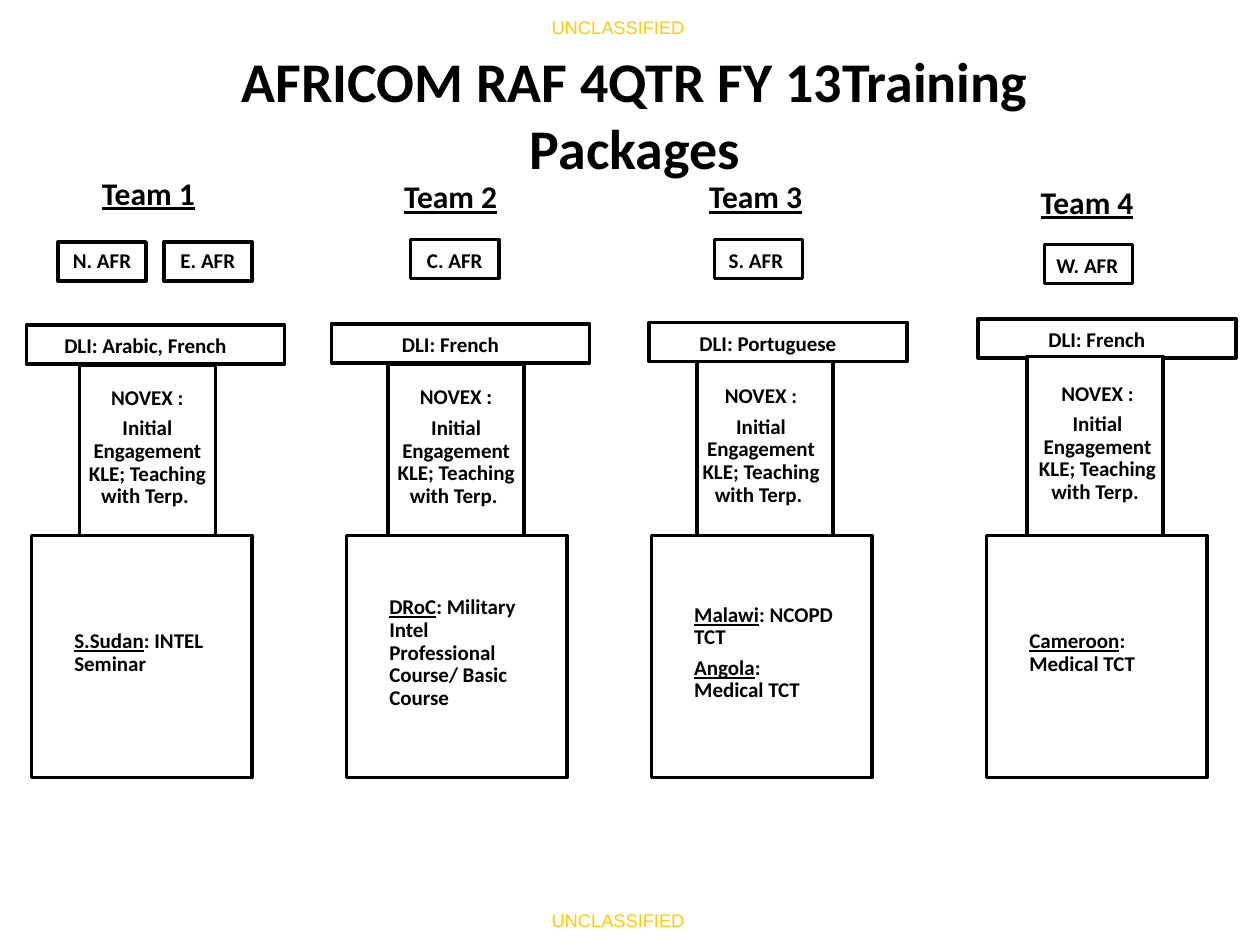
import dataclasses
import pptx
import pptx.dml.color
import pptx.enum.shapes
import pptx.enum.text
import pptx.util

BLACK = pptx.dml.color.RGBColor(0x00, 0x00, 0x00)
WHITE = pptx.dml.color.RGBColor(0xFF, 0xFF, 0xFF)
YELLOW = pptx.dml.color.RGBColor(0xFF, 0xCC, 0x00)
COLUMNS, ROWS = 100, 75
LEFT = pptx.enum.text.PP_ALIGN.LEFT
CENTER = pptx.enum.text.PP_ALIGN.CENTER
MIDDLE = pptx.enum.text.MSO_ANCHOR.MIDDLE


@dataclasses.dataclass
class Team:
    name: str
    heading: tuple
    regions: list
    region_shift: tuple
    language: str
    language_at: tuple
    trainer_at: tuple
    trainer_shift: float
    trainer_text_width: float
    course_left: float
    courses: list


class Board:
    def __init__(self, deck):
        self.page = deck.slides.add_slide(deck.slide_layouts[5])
        self.column = deck.slide_width / COLUMNS
        self.row = deck.slide_height / ROWS

    def place(self, left, top, width, height):
        return (round(left * self.column), round(top * self.row),
                round(width * self.column), round(height * self.row))

    def style(self, para, size, name="Calibri", color=BLACK, bold=True, underline=None):
        font = para.font
        font.size = pptx.util.Pt(size)
        font.name = name
        font.bold = bold
        font.underline = underline
        font.color.rgb = color

    def title(self, text, area):
        box = self.page.shapes.title
        box.left, box.top, box.width, box.height = self.place(*area)
        frame = box.text_frame
        frame.text = text
        frame.word_wrap = True
        frame.auto_size = pptx.enum.text.MSO_AUTO_SIZE.NONE
        frame.vertical_anchor = MIDDLE
        para = frame.paragraphs[0]
        para.alignment = CENTER
        self.style(para, 32)

    def label(self, text, area, size, **look):
        box = self.page.shapes.add_textbox(*self.place(*area))
        frame = box.text_frame
        frame.text = text
        frame.word_wrap = False
        frame.auto_size = pptx.enum.text.MSO_AUTO_SIZE.SHAPE_TO_FIT_TEXT
        self.style(frame.paragraphs[0], size, **look)

    def panel(self, area, text_area, paragraphs, alignment=CENTER):
        group = self.page.shapes.add_group_shape()
        box = group.shapes.add_shape(
            pptx.enum.shapes.MSO_SHAPE.RECTANGLE, *self.place(*area))
        box.shadow.inherit = False
        box.fill.solid()
        box.fill.fore_color.rgb = WHITE
        box.line.color.rgb = BLACK
        box.line.width = pptx.util.Pt(2)

        frame = group.shapes.add_textbox(*self.place(*text_area)).text_frame
        frame.word_wrap = True
        frame.vertical_anchor = MIDDLE
        frame.margin_left = frame.margin_right = pptx.util.Inches(0.01)
        frame.margin_top = frame.margin_bottom = pptx.util.Inches(0.01)
        for index, parts in enumerate(paragraphs):
            para = frame.add_paragraph() if index else frame.paragraphs[0]
            para.alignment = alignment
            para.line_spacing = 0.9
            para.space_after = pptx.util.Pt(4.4)
            self.style(para, 12)
            for part, underline in parts:
                span = para.add_run()
                span.text = part
                if underline:
                    span.font.underline = True

    def team(self, team):
        self.label(team.name, (*team.heading, 9.5, 4), 18, underline=True)

        shift_x, shift_y = team.region_shift
        for name, left, top in team.regions:
            self.panel((left, top, 7, 3.1),
                       (left + shift_x, top + shift_y, 7, 3.1), [[(name, False)]])

        left, top = team.language_at
        self.panel((left, top, 20.5, 3.1), (left - 0.8, top + 0.2, 20.5, 3.1),
                   [[("DLI: " + team.language, False)]])

        left = team.course_left
        self.panel((left, COURSE_TOP, 17.5, 19.2), (left + 3.3, COURSE_TOP, 11.3, 18.7),
                   [[(country, True), (": " + course, False)]
                    for country, course in team.courses], LEFT)

        left, top = team.trainer_at
        height = COURSE_TOP - top
        self.panel((left, top, 10.8, height),
                   (left + team.trainer_shift, top, team.trainer_text_width, height - 0.4),
                   [[(line, False)] for line in TRAINER])


COURSE_TOP = 42.5
TRAINER = ["NOVEX :", "Initial Engagement KLE; Teaching with Terp. "]
TEAMS = [
    Team("Team 1", (7.1, 13.3), [("N. AFR", 4.6, 19.2), ("E. AFR", 13, 19.2)], (0, 0),
         "Arabic, French", (2.1, 25.8), (6.3, 29), 0.4, 10,
         2.5, [("S.Sudan", "INTEL Seminar")]),
    Team("Team 2", (31.1, 13.6), [("C. AFR", 32.6, 19)], (0, 0.2),
         "French", (26.3, 25.7), (30.8, 28.9), 0, 10.8,
         27.5, [("DRoC", "Military Intel Professional Course/ Basic Course")]),
    Team("Team 3", (55.3, 13.6), [("S. AFR", 56.7, 19)], (-0.2, 0.2),
         "Portuguese", (51.5, 25.6), (55.3, 28.7), -0.3, 10.8,
         51.7, [("Malawi", "NCOPD TCT"), ("Angola", "Medical TCT")]),
    Team("Team 4", (81.6, 14), [("W. AFR", 82.9, 19.4)], (-0.1, 0.2),
         "French", (77.6, 25.3), (81.5, 28.3), 0.2, 10.8,
         78.3, [("Cameroon", "Medical TCT")]),
]


def main():
    deck = pptx.Presentation()
    deck.slide_width = pptx.util.Inches(10)
    deck.slide_height = pptx.util.Inches(7.5)
    board = Board(deck)
    for top in (0.8, 71.7):
        board.label("UNCLASSIFIED", (42.8, top, 12.7, 2.8), 10.5,
                    name="Arial", color=YELLOW, bold=False)
    board.title("AFRICOM RAF 4QTR FY 13Training Packages", (12.5, 5.8, 75.8, 6.4))
    for team in TEAMS:
        board.team(team)
    deck.save("out.pptx")


if __name__ == "__main__":
    main()
